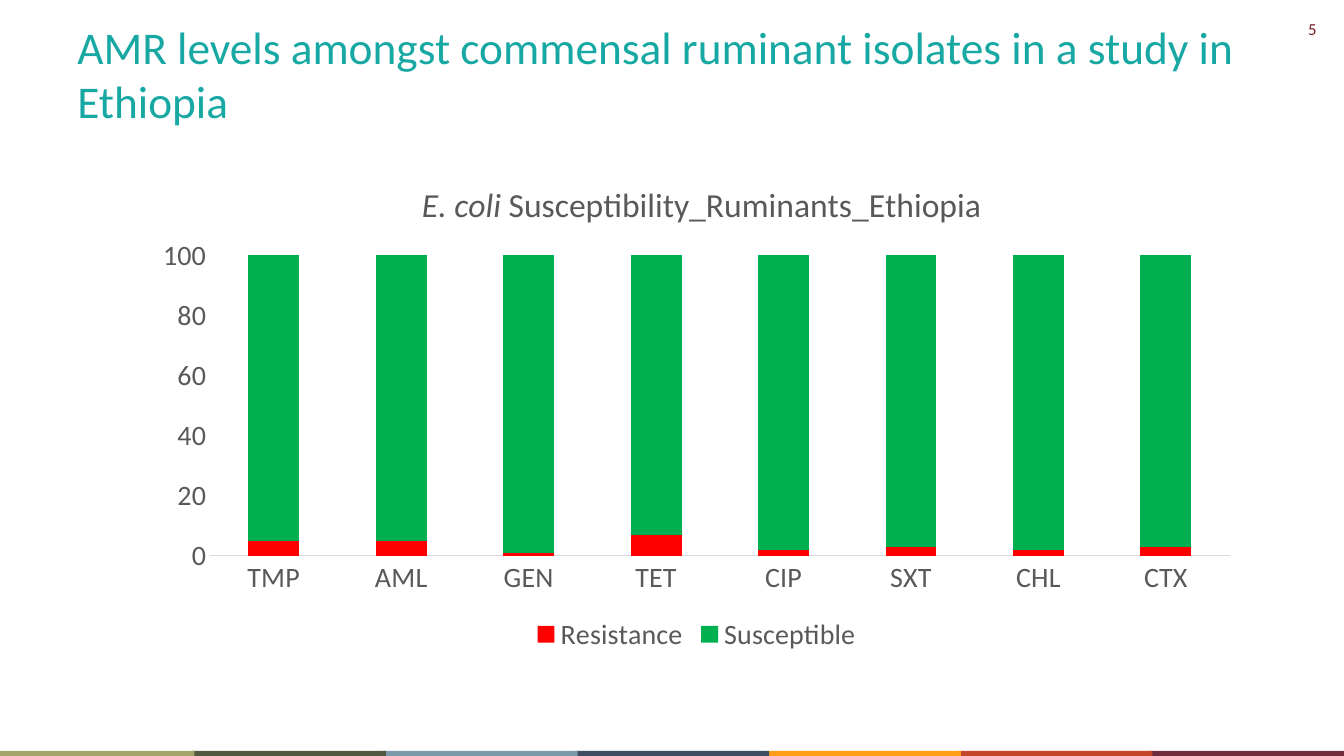
from lxml import etree
from pptx import Presentation
from pptx import util as u
from pptx.chart import data
from pptx.dml.color import RGBColor
from pptx.enum import chart as ch
from pptx.enum import shapes, text
from pptx.oxml import ns

FONT = "Calibri"
TEAL = RGBColor(0x17, 0xA8, 0xA4)
MAROON = RGBColor(0x76, 0x21, 0x23)
GREY = RGBColor(0x59, 0x59, 0x59)
PALE_GREY = RGBColor(0xD9, 0xD9, 0xD9)
RED = RGBColor(0xFF, 0x00, 0x00)
GREEN = RGBColor(0x00, 0xB0, 0x50)
STRIPES = [RGBColor.from_string(code) for code in (
    "A3A467", "53593E", "7C98AB", "404E65", "FF9E16", "C34628", "712C3D")]

DRUGS = ["TMP", "AML", "GEN", "TET", "CIP", "SXT", "CHL", "CTX"]
RESISTANT = [5, 5, 1, 7, 2, 3, 2, 3]


def style(font, size, color):
    """Apply the deck typeface with a size and colour."""
    font.name, font.size, font.color.rgb = FONT, u.Pt(size), color


def add_text(page, box, words, size, color, align, anchor):
    """Place one paragraph of text in the given box."""
    frame = page.shapes.add_textbox(*box).text_frame
    frame.word_wrap = True
    frame.vertical_anchor = anchor
    para = frame.paragraphs[0]
    para.text = words
    para.alignment = align
    style(para.runs[0].font, size, color)


def add_stripes(page, box):
    """Fill the box with equal coloured bands, left ones lapping over right."""
    left, top, width, height = box
    step = width // len(STRIPES)
    for index, color in reversed(list(enumerate(STRIPES))):
        band = page.shapes.add_shape(
            shapes.MSO_SHAPE.RECTANGLE, left + index * step, top,
            step + u.Cm(0.07), height)
        band.shadow.inherit = False
        band.fill.solid()
        band.fill.fore_color.rgb = color
        band.line.fill.background()


def set_layout(parent, position, **settings):
    """Fix the place of a chart part as fractions of the chart."""
    for old in parent.findall(ns.qn("c:layout")):
        parent.remove(old)
    layout = etree.Element(ns.qn("c:layout"))
    manual = etree.SubElement(layout, ns.qn("c:manualLayout"))
    for tag, value in settings.items():
        etree.SubElement(manual, ns.qn("c:" + tag)).set("val", str(value))
    parent.insert(position, layout)


def add_susceptibility_chart(page, box):
    """Draw the stacked columns of resistant and susceptible isolates."""
    table = data.CategoryChartData()
    table.categories = DRUGS
    table.add_series("Resistance", RESISTANT)
    table.add_series("Susceptible", [100 - share for share in RESISTANT])
    chart = page.shapes.add_chart(
        ch.XL_CHART_TYPE.COLUMN_STACKED, *box, table).chart
    style(chart.font, 20, GREY)

    para = chart.chart_title.text_frame.paragraphs[0]
    for words, italic in (("E. coli", True),
                          (" Susceptibility_Ruminants_Ethiopia", False)):
        span = para.add_run()
        span.text = words
        style(span.font, 24, GREY)
        span.font.bold, span.font.italic = False, italic
    chart.chart_title.include_in_layout = False
    set_layout(chart.chart_title._element, 1,
               xMode="edge", yMode="edge", x=0.25, y=0.04)

    plot = chart.plots[0]
    plot.gap_width, plot.overlap = 150, 100
    plot.vary_by_categories = False
    for series, color in zip(plot.series, (RED, GREEN)):
        series.format.fill.solid()
        series.format.fill.fore_color.rgb = color

    for axis in (chart.category_axis, chart.value_axis):
        axis.major_tick_mark = axis.minor_tick_mark = ch.XL_TICK_MARK.NONE
        axis.has_major_gridlines = False
        style(axis.tick_labels.font, 20, GREY)
    chart.category_axis.format.line.color.rgb = PALE_GREY
    chart.category_axis.format.line.width = u.Pt(0.75)
    scale = chart.value_axis
    scale.format.line.fill.background()
    scale.minimum_scale, scale.maximum_scale, scale.major_unit = 0, 100, 20

    chart.has_legend = True
    chart.legend.position = ch.XL_LEGEND_POSITION.BOTTOM
    chart.legend.include_in_layout = False
    style(chart.legend.font, 20, GREY)
    set_layout(chart._chartSpace.chart.plotArea, 0, layoutTarget="inner",
               xMode="edge", yMode="edge", x=0.062, y=0.19, w=0.918, h=0.606)


def main():
    """Build the slide and save the deck."""
    deck = Presentation()
    deck.slide_width, deck.slide_height = u.Cm(33.87), u.Cm(19.05)
    page = deck.slides.add_slide(deck.slide_layouts[6])
    add_text(page, (u.Cm(31.65), u.Cm(0.36), u.Cm(1.78), u.Cm(0.76)),
             "5", 12, MAROON, text.PP_ALIGN.RIGHT, text.MSO_ANCHOR.TOP)
    add_stripes(page, (0, u.Cm(18.92), u.Cm(33.8), u.Cm(0.15)))
    add_text(page, (u.Cm(1.7), u.Cm(0.91), u.Cm(30.48), u.Cm(1.88)),
             "AMR levels amongst commensal ruminant isolates in a study in Ethiopia",
             32.4, TEAL, text.PP_ALIGN.LEFT, text.MSO_ANCHOR.MIDDLE)
    add_susceptibility_chart(
        page, (u.Cm(3.56), u.Cm(4.06), u.Cm(27.99), u.Cm(12.5)))
    deck.save("out.pptx")


if __name__ == "__main__":
    main()
